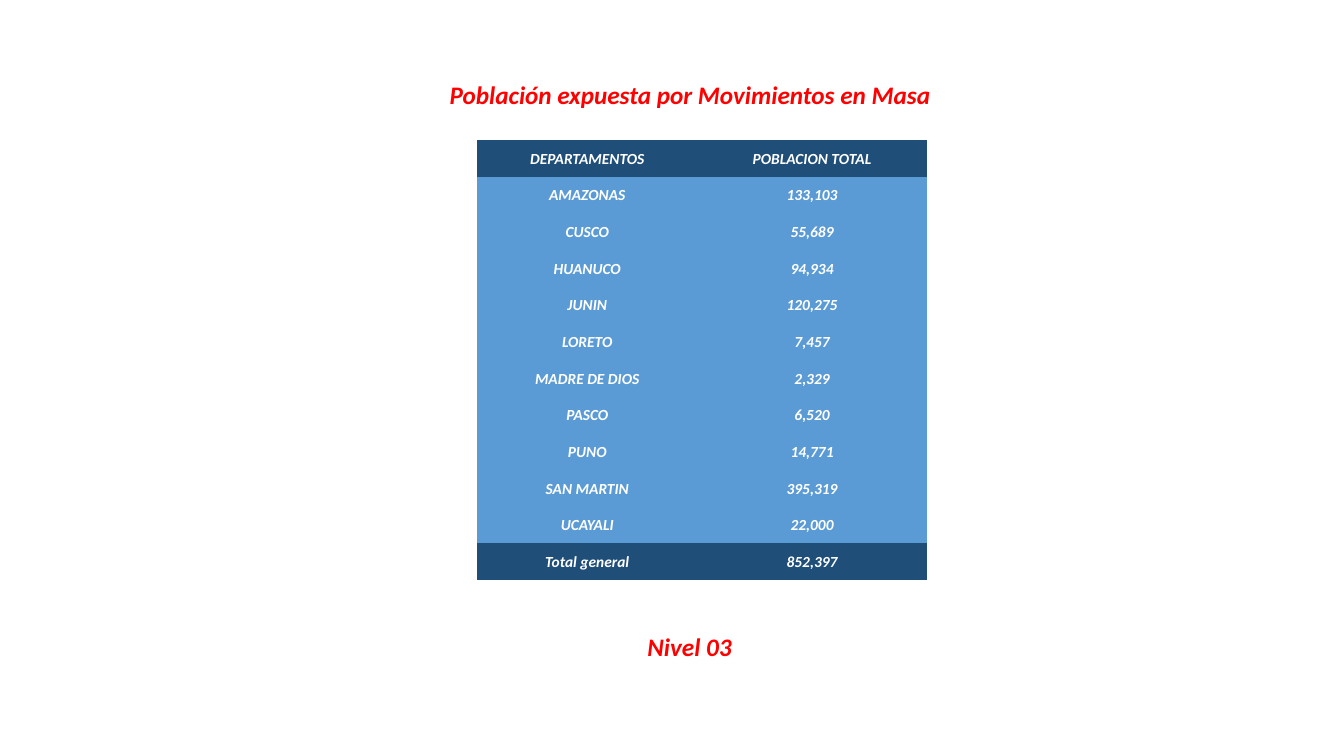
"""Builds the slide on population exposed to mass movements."""
import pptx
import pptx.dml.color
import pptx.enum.text
import pptx.oxml.ns
import pptx.util

RED, WHITE, NAVY, BLUE = "FF0000", "FFFFFF", "1F4E79", "5B9BD5"
NO_GRID_STYLE = "{2D5ABB26-0587-4C30-8999-92F81FD0307C}"

POPULATION = [
    ("DEPARTAMENTOS", "POBLACION TOTAL"),
    ("AMAZONAS", "133,103"),
    ("CUSCO", "55,689"),
    ("HUANUCO", "94,934"),
    ("JUNIN", "120,275"),
    ("LORETO", "7,457"),
    ("MADRE DE DIOS", "2,329"),
    ("PASCO", "6,520"),
    ("PUNO", "14,771"),
    ("SAN MARTIN", "395,319"),
    ("UCAYALI", "22,000"),
    ("Total general", "852,397"),
]


def px(length):
    return pptx.util.Emu(length * 9144)


def color(value):
    return pptx.dml.color.RGBColor.from_string(value)


class SlideBuilder:
    font = "Calibri"
    heading_size = 18
    table_size = 11

    def __init__(self, deck):
        self.slide = deck.slides.add_slide(deck.slide_layouts[5])

    def add_text(self, frame, text, size, ink):
        para = frame.paragraphs[0]
        para.alignment = pptx.enum.text.PP_ALIGN.CENTER
        span = para.add_run()
        span.text = text
        span.font.name = self.font
        span.font.size = pptx.util.Pt(size)
        span.font.bold = span.font.italic = True
        span.font.color.rgb = color(ink)

    def heading(self, box, text, left, top, width, height, wrap):
        box.left, box.top, box.width, box.height = map(px, (left, top, width, height))
        frame = box.text_frame
        frame.word_wrap = wrap
        frame.auto_size = pptx.enum.text.MSO_AUTO_SIZE.SHAPE_TO_FIT_TEXT
        frame.vertical_anchor = pptx.enum.text.MSO_ANCHOR.TOP
        self.add_text(frame, text, self.heading_size, RED)

    def title(self, text, *bounds):
        self.heading(self.slide.shapes.title, text, *bounds, wrap=False)

    def caption(self, text, *bounds):
        box = self.slide.shapes.add_textbox(*map(px, bounds))
        self.heading(box, text, *bounds, wrap=True)

    def table(self, rows, left, top, widths, height):
        bounds = map(px, (left, top, sum(widths), height))
        table = self.slide.shapes.add_table(len(rows), len(widths), *bounds).table
        table.first_row = table.horz_banding = False
        style_tag = pptx.oxml.ns.qn("a:tableStyleId")
        table._tbl.tblPr.find(style_tag).text = NO_GRID_STYLE
        for column, width in zip(table.columns, widths):
            column.width = px(width)
        for row_index, values in enumerate(rows):
            fill = NAVY if row_index in (0, len(rows) - 1) else BLUE
            for column_index, value in enumerate(values):
                self.cell(table.cell(row_index, column_index), value, fill)

    def cell(self, cell, text, fill):
        cell.margin_left = cell.margin_right = cell.margin_top = px(1)
        cell.margin_bottom = 0
        cell.vertical_anchor = pptx.enum.text.MSO_ANCHOR.MIDDLE
        cell.fill.solid()
        cell.fill.fore_color.rgb = color(fill)
        self.add_text(cell.text_frame, text, self.table_size, WHITE)


def main():
    deck = pptx.Presentation()
    deck.slide_width, deck.slide_height = px(1333), px(750)
    page = SlideBuilder(deck)
    page.title("Población expuesta por Movimientos en Masa", 433, 74, 503, 40)
    page.caption("Nivel 03", 629, 621, 110, 40)
    page.table(POPULATION, 473, 139, (219, 227), 437)
    deck.save("out.pptx")


if __name__ == "__main__":
    main()
